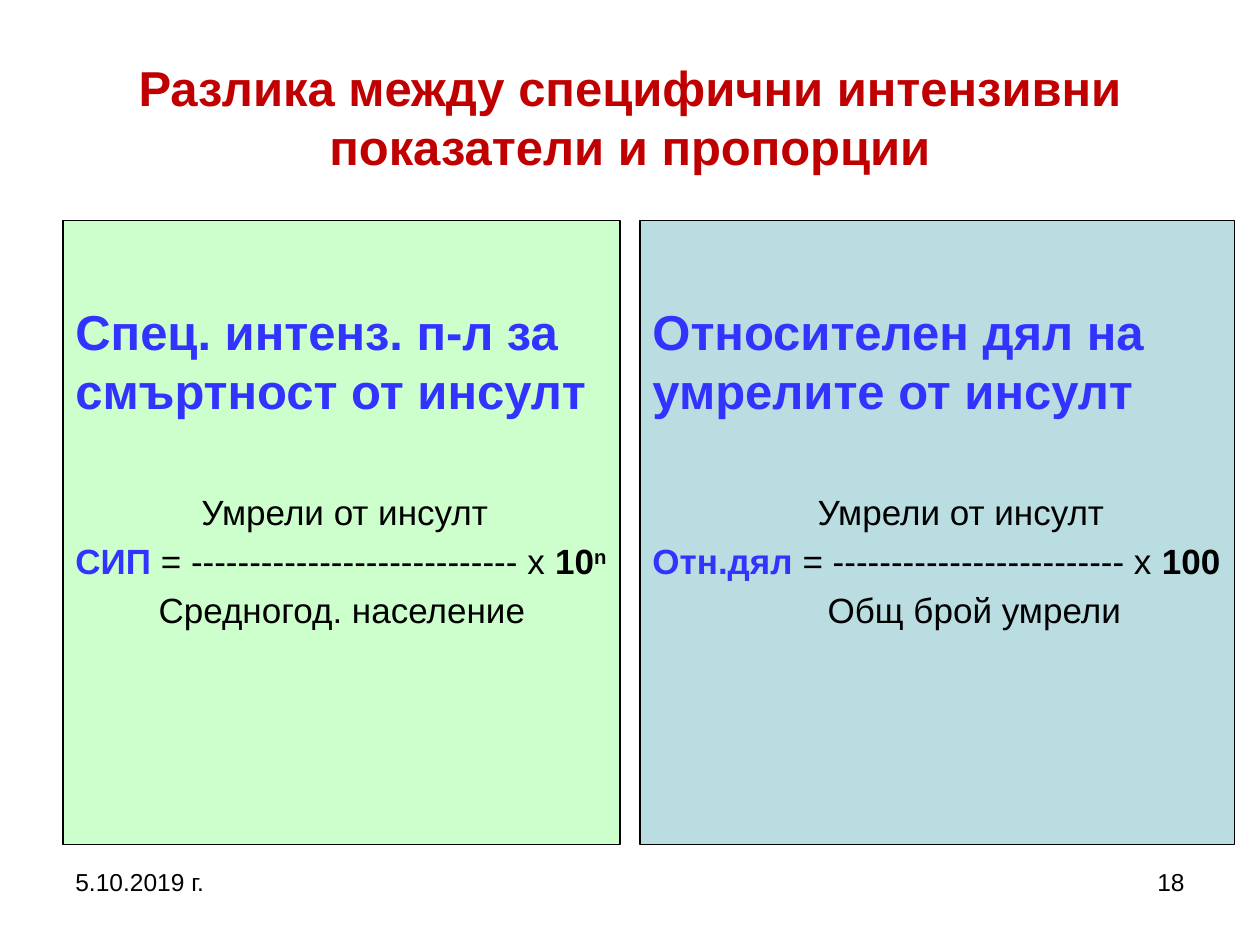
from dataclasses import dataclass

from pptx import Presentation
from pptx.dml.color import RGBColor
from pptx.enum.shapes import MSO_SHAPE
from pptx.enum.text import MSO_ANCHOR, PP_ALIGN
from pptx.util import Inches, Pt


@dataclass(frozen=True)
class Theme:
    """Colours, font and type sizes of the slide."""
    font: str = "Arial"
    title: str = "C00000"
    accent: str = "3333FF"
    ink: str = "000000"
    rate_fill: str = "CCFFCC"
    share_fill: str = "BADDE1"
    heading_size: int = 28
    formula_size: int = 20
    footer_size: int = 14


THEME = Theme()
WIDTH, HEIGHT = 10, 7.5
MARGIN = WIDTH * 0.05
PANEL_TOP, PANEL_HEIGHT = 1.75, 4.95
FOOTER_TOP, FOOTER_WIDTH, FOOTER_HEIGHT = 6.83, 2.33, 0.52


def add_run(paragraph, text, size, color=THEME.ink, bold=False, raised=False):
    """Append one styled run to a paragraph."""
    run = paragraph.add_run()
    run.text = text
    run.font.name = THEME.font
    run.font.size = Pt(size)
    run.font.bold = bold
    run.font.color.rgb = RGBColor.from_string(color)
    if raised:
        run.font._element.set("baseline", "30000")


def add_label(slide, box, text, size, color=THEME.ink, bold=False,
              align=PP_ALIGN.LEFT, anchor=MSO_ANCHOR.TOP):
    """Add a wrapped text box holding one run."""
    frame = slide.shapes.add_textbox(*map(Inches, box)).text_frame
    frame.word_wrap = True
    frame.vertical_anchor = anchor
    frame.paragraphs[0].alignment = align
    add_run(frame.paragraphs[0], text, size, color, bold)


def add_formula_line(frame, parts, before=4, indent=0):
    """Add one formula line made of (text, style) parts."""
    line = frame.add_paragraph()
    line.alignment = PP_ALIGN.LEFT
    line.space_before = Pt(before)
    line._p.get_or_add_pPr().set("indent", str(Inches(indent)))
    for text, style in parts:
        add_run(line, text, THEME.formula_size, **style)


def add_panel(slide, left, width, fill, heading, numerator, ratio, denominator):
    """Add a filled panel with a heading over a three-line fraction."""
    panel = slide.shapes.add_shape(
        MSO_SHAPE.RECTANGLE, *map(Inches, (left, PANEL_TOP, width, PANEL_HEIGHT)))
    panel.shadow.inherit = False
    panel.fill.solid()
    panel.fill.fore_color.rgb = RGBColor.from_string(fill)
    panel.line.color.rgb = RGBColor.from_string(THEME.ink)
    panel.line.width = Pt(0.75)
    frame = panel.text_frame
    frame.word_wrap = True
    frame.vertical_anchor = MSO_ANCHOR.TOP
    frame.margin_top = Inches(0.64)
    frame.margin_right = Inches(0.04)
    frame.paragraphs[0].alignment = PP_ALIGN.LEFT
    add_run(frame.paragraphs[0], heading, THEME.heading_size, THEME.accent, True)
    for (text, indent), before in ((numerator, 41), (denominator, 4)):
        add_formula_line(frame, [(text, {})], before, indent)
        if text == numerator[0]:
            add_formula_line(frame, ratio)


def main():
    """Build and save the slide."""
    deck = Presentation()
    deck.slide_width, deck.slide_height = Inches(WIDTH), Inches(HEIGHT)
    slide = deck.slides.add_slide(deck.slide_layouts[6])
    name_style = {"color": THEME.accent, "bold": True}
    strong = {"bold": True}

    add_label(slide, (MARGIN, 0.3, WIDTH - 2 * MARGIN, 1.25),
              "Разлика между специфични интензивни показатели и пропорции",
              THEME.heading_size, THEME.title, True,
              PP_ALIGN.CENTER, MSO_ANCHOR.MIDDLE)
    add_panel(slide, MARGIN, 4.42, THEME.rate_fill,
              "Спец. интенз. п-л за смъртност от инсулт",
              ("Умрели от инсулт", 1),
              [("СИП", name_style), (" = " + "-" * 28 + " х", {}),
               (" 10", strong), ("n", {"bold": True, "raised": True})],
              ("Средногод. население", 0.66))
    add_panel(slide, 5.08, 4.72, THEME.share_fill,
              "Относителен дял на умрелите от инсулт",
              ("Умрели от инсулт", 1.31),
              [("Отн.дял", name_style), (" = " + "-" * 25 + " х ", {}),
               ("100", strong)],
              ("Общ брой умрели", 1.39))
    for left, text, align in (
            (WIDTH - MARGIN - FOOTER_WIDTH, "18", PP_ALIGN.RIGHT),
            (MARGIN, "5.10.2019 г.", PP_ALIGN.LEFT)):
        add_label(slide, (left, FOOTER_TOP, FOOTER_WIDTH, FOOTER_HEIGHT),
                  text, THEME.footer_size, align=align)
    deck.save("out.pptx")


if __name__ == "__main__":
    main()
